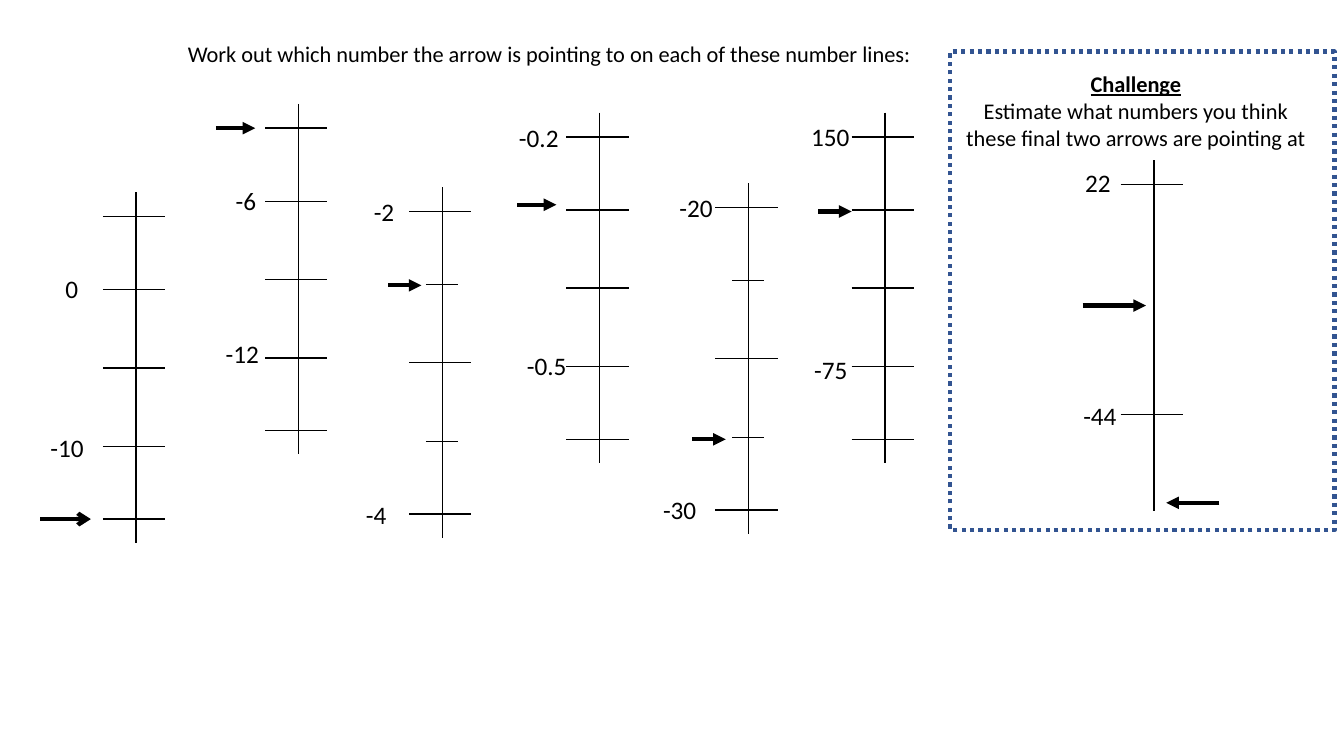
from dataclasses import dataclass

from lxml import etree
from pptx import Presentation
from pptx.dml.color import RGBColor
from pptx.enum.dml import MSO_LINE
from pptx.enum.shapes import MSO_CONNECTOR, MSO_SHAPE
from pptx.enum.text import PP_ALIGN
from pptx.oxml.ns import qn
from pptx.shapes.connector import Connector
from pptx.slide import Slide
from pptx.text.text import TextFrame, _Paragraph
from pptx.util import Cm, Pt

STRAIGHT = MSO_CONNECTOR.STRAIGHT
RECTANGLE = MSO_SHAPE.RECTANGLE
ROUND_DOT = MSO_LINE.ROUND_DOT
CENTER = PP_ALIGN.CENTER
LEFT = PP_ALIGN.LEFT

FONT = "Calibri"
BLACK = "000000"
BLUE = "325491"
AXIS_LENGTH = 8.83
TICK_OFFSETS = (0.61, 2.45, 4.42, 6.4, 8.23)
TICK_LEFT, TICK_WIDTH = 0.84, 1.57
SHORT_LEFT, SHORT_WIDTH = 0.42, 0.8
LABEL_HEIGHT = 1.02


@dataclass
class Label:
    text: str
    left: float
    top: float
    width: float


@dataclass
class Arrow:
    start: float
    end: float
    y: float
    head: str = "triangle"


@dataclass
class NumberLine:
    x: float
    top: float
    labels: tuple[Label, ...]
    arrows: tuple[Arrow, ...]
    ticks: tuple[int, ...] = (0, 1, 2, 3, 4)
    short_ticks: tuple[int, ...] = ()


NUMBER_LINES = (
    NumberLine(3.43, 4.85,
               (Label("0", 1.4, 6.76, 1.19), Label("-10", 1.02, 10.77, 1.57)),
               (Arrow(1.02, 2.29, 13.08, "arrow"),)),
    NumberLine(7.52, 2.62,
               (Label("-6", 5.69, 4.55, 1.19), Label("-12", 5.44, 8.41, 1.45)),
               (Arrow(5.44, 6.43, 3.23),)),
    NumberLine(11.15, 4.72,
               (Label("-2", 9.17, 4.83, 1.45), Label("-4", 8.97, 12.45, 1.45)),
               (Arrow(9.78, 10.62, 7.19),), short_ticks=(1, 3)),
    NumberLine(15.11, 2.84,
               (Label("-0.2", 12.83, 2.97, 1.6), Label("-0.5", 13.03, 8.71, 1.63)),
               (Arrow(13.03, 14.02, 5.16),)),
    NumberLine(18.87, 4.62,
               (Label("-20", 16.87, 4.72, 1.45), Label("-30", 16.46, 12.34, 1.45)),
               (Arrow(17.45, 18.29, 11.07),), short_ticks=(1, 3)),
    NumberLine(22.3, 2.84,
               (Label("150", 20.19, 2.92, 1.57), Label("-75", 20.27, 8.81, 2.01)),
               (Arrow(20.62, 21.46, 5.33),)),
    NumberLine(29.08, 4.04,
               (Label("22", 27.1, 4.09, 1.57), Label("-44", 27.05, 9.96, 1.57)),
               (Arrow(27.28, 28.88, 7.7), Arrow(30.73, 29.39, 12.67)),
               ticks=(0, 3)),
)


def color(value: str) -> RGBColor:
    return RGBColor.from_string(value)


def add_line(page: Slide, x1: float, y1: float, x2: float, y2: float,
             width: float = 1) -> Connector:
    line = page.shapes.add_connector(STRAIGHT, Cm(x1), Cm(y1), Cm(x2), Cm(y2))
    line.line.color.rgb = color(BLACK)
    line.line.width = Pt(width)
    etree.SubElement(line._element.spPr, qn("a:effectLst"))
    return line


def add_arrow(page: Slide, arrow: Arrow) -> None:
    line = add_line(page, arrow.start, arrow.y, arrow.end, arrow.y, 3)
    outline = line._element.spPr.find(qn("a:ln"))
    etree.SubElement(outline, qn("a:tailEnd"), type=arrow.head)


def add_box(page: Slide, left: float, top: float, width: float,
            height: float) -> TextFrame:
    box = page.shapes.add_textbox(Cm(left), Cm(top), Cm(width), Cm(height))
    box.text_frame.word_wrap = True
    return box.text_frame


def add_span(para: _Paragraph, text: str, size: float,
             align: PP_ALIGN = CENTER, heading: bool = False) -> None:
    para.alignment = align
    span = para.add_run()
    span.text = text
    span.font.name = FONT
    span.font.size = Pt(size)
    span.font.color.rgb = color(BLACK)
    span.font.bold = heading
    span.font.underline = heading


def add_number_line(page: Slide, scale: NumberLine) -> None:
    add_line(page, scale.x, scale.top, scale.x, scale.top + AXIS_LENGTH)
    for tick in scale.ticks:
        short = tick in scale.short_ticks
        left = scale.x - (SHORT_LEFT if short else TICK_LEFT)
        width = SHORT_WIDTH if short else TICK_WIDTH
        y = scale.top + TICK_OFFSETS[tick]
        add_line(page, left, y, left + width, y)
    for label in scale.labels:
        frame = add_box(page, label.left, label.top, label.width, LABEL_HEIGHT)
        add_span(frame.paragraphs[0], label.text, 18, LEFT)
    for arrow in scale.arrows:
        add_arrow(page, arrow)


def add_instruction(page: Slide) -> None:
    para = add_box(page, 4.14, 0.97, 19.41, 2.36).paragraphs[0]
    para.line_spacing = 0.9
    add_span(para, "Work out which number the arrow is pointing to "
                   "on each of these number lines:", 16)


def add_challenge(page: Slide) -> None:
    frame = add_box(page, 23.95, 1.65, 9.35, 2.31)
    add_span(frame.paragraphs[0], "Challenge", 16, heading=True)
    add_span(frame.add_paragraph(), "Estimate what numbers you think "
                                    "these final two arrows are pointing at", 16)
    border = page.shapes.add_shape(RECTANGLE, Cm(23.95), Cm(1.3), Cm(9.68), Cm(12.06))
    border.shadow.inherit = False
    border.fill.background()
    border.line.color.rgb = color(BLUE)
    border.line.width = Pt(3)
    border.line.dash_style = ROUND_DOT


def main() -> None:
    deck = Presentation()
    deck.slide_width, deck.slide_height = Cm(33.87), Cm(19.05)
    page = deck.slides.add_slide(deck.slide_layouts[6])
    add_instruction(page)
    for scale in NUMBER_LINES:
        add_number_line(page, scale)
    add_challenge(page)
    deck.save("out.pptx")


if __name__ == "__main__":
    main()
